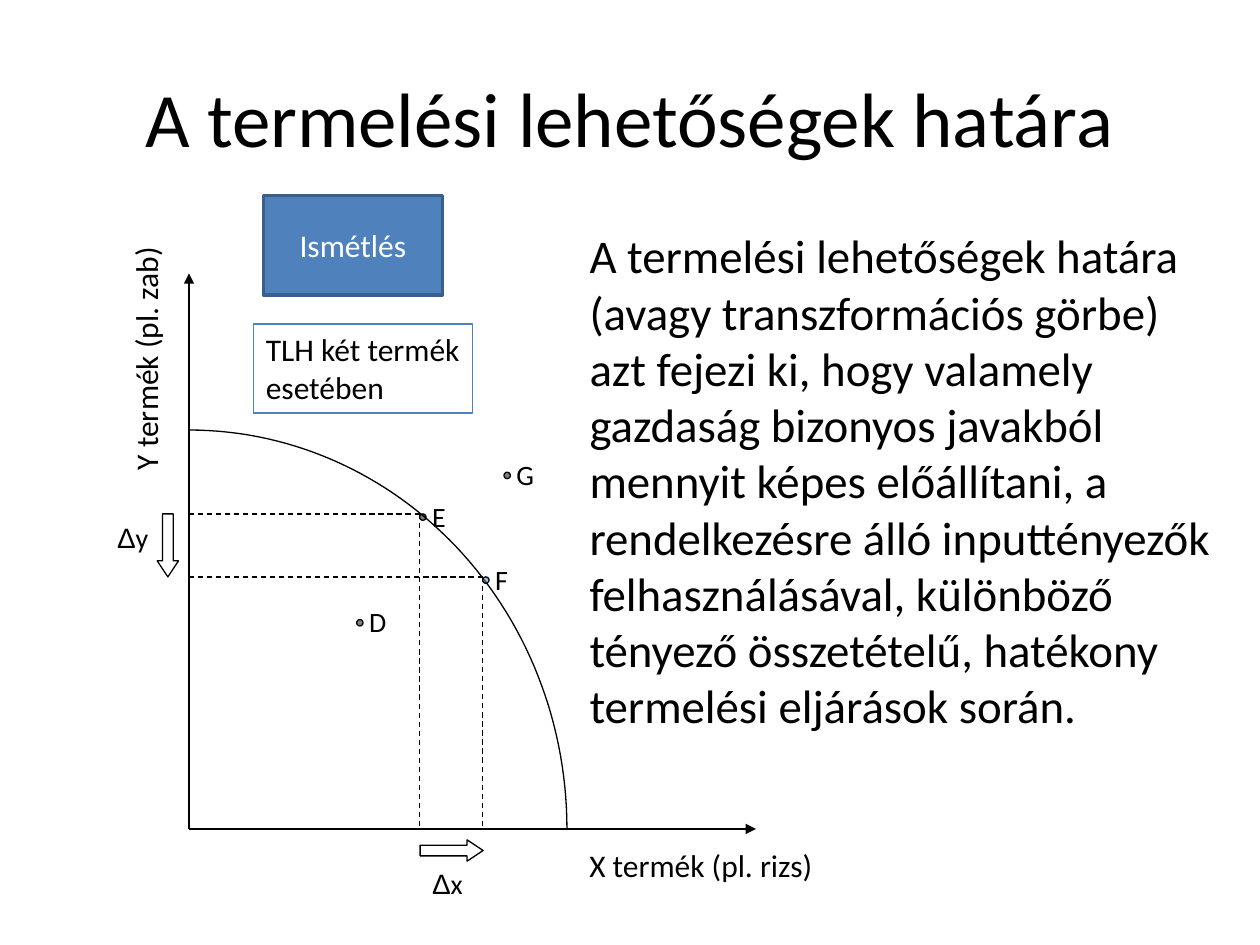
import math

from lxml import etree
from pptx import Presentation
from pptx.dml.color import RGBColor
from pptx.enum import dml, shapes, text
from pptx.oxml import ns
from pptx.util import Cm, Pt

BLACK = RGBColor(0x00, 0x00, 0x00)
WHITE = RGBColor(0xFF, 0xFF, 0xFF)
BLUE = RGBColor(0x4F, 0x81, 0xBD)
DARK_BLUE = RGBColor(0x3A, 0x5F, 0x8C)


def write(shape, *runs, size=18, color=BLACK, align=text.PP_ALIGN.LEFT,
          anchor=text.MSO_ANCHOR.TOP, space_before=0):
    """Fill a shape with one paragraph of (wording, font name) runs."""
    frame = shape.text_frame
    frame.word_wrap = True
    frame.auto_size = text.MSO_AUTO_SIZE.NONE
    frame.vertical_anchor = anchor
    paragraph = frame.paragraphs[0]
    paragraph.alignment = align
    paragraph.space_before = Pt(space_before)
    for wording, font_name in runs:
        run = paragraph.add_run()
        run.text = wording
        run.font.name = font_name
        run.font.size = Pt(size)
        run.font.color.rgb = color


def calibri(wording):
    return wording, "Calibri"


def place(shape, left, top, width, height):
    shape.left, shape.top = Cm(left), Cm(top)
    shape.width, shape.height = Cm(width), Cm(height)


def style_line(shape, color=BLACK, width=0.75):
    shape.line.color.rgb = color
    shape.line.width = Pt(width)


def add_label(slide, box, *runs, **text_format):
    shape = slide.shapes.add_textbox(*map(Cm, box))
    write(shape, *runs, **text_format)
    return shape


def add_preset(slide, kind, box, fill=None, alpha=None, line=BLACK, line_width=0.75):
    shape = slide.shapes.add_shape(kind, *map(Cm, box))
    shape.shadow.inherit = False
    style_line(shape, line, line_width)
    if fill is None:
        shape.fill.background()
        return shape
    shape.fill.solid()
    shape.fill.fore_color.rgb = fill
    if alpha is not None:
        color = shape.fill._xPr.find(".//" + ns.qn("a:srgbClr"))
        etree.SubElement(color, ns.qn("a:alpha"), val=str(alpha * 1000))
    return shape


def add_line(slide, start, end, dashed=False, arrow=False):
    line = slide.shapes.add_connector(shapes.MSO_CONNECTOR.STRAIGHT,
                                      *map(Cm, (*start, *end)))
    style_line(line)
    if dashed:
        line.line.dash_style = dml.MSO_LINE.DASH
    if arrow:
        etree.SubElement(line.line._get_or_add_ln(), ns.qn("a:tailEnd"), type="triangle")
    etree.SubElement(line._element.spPr, ns.qn("a:effectLst"))


def add_frontier(slide, origin, radius_x, radius_y, steps=60):
    """Draw the quarter ellipse from the y axis to the x axis."""
    angles = [math.pi / 2 * step / steps for step in range(steps + 1)]
    points = [(Cm(origin[0] + radius_x * math.sin(angle)),
               Cm(origin[1] - radius_y * math.cos(angle))) for angle in angles]
    builder = slide.shapes.build_freeform(*points[0])
    builder.add_line_segments(points[1:], close=False)
    curve = builder.convert_to_shape()
    curve.shadow.inherit = False
    curve.fill.background()
    style_line(curve)


def add_diagram(slide, left, top, width, height):
    """Draw the axes, the frontier and its points; the box spans the axes."""
    base = top + height

    def at(x, y):
        return left + x, base - y

    origin = at(0, 0)
    add_line(slide, origin, at(0, height), arrow=True)
    add_line(slide, origin, at(width, 0), arrow=True)
    add_label(slide, (*at(7.82, -0.23), 8.26, 1.02), calibri("X termék (pl. rizs)"))
    y_label = add_label(slide, (*at(-3.51, 10.13), 5.28, 1.02), calibri("Y termék (pl. zab)"))
    y_label.rotation = 270
    add_frontier(slide, origin, 7.62, 8.04)

    e_point, f_point = (4.65, 6.35), (5.92, 5.08)
    points = [("D", (3.38, 4.22), BLACK), ("E", e_point, BLACK),
              ("G", (6.35, 7.19), BLACK), ("F", f_point, BLUE)]
    for name, (x, y), fill in points:
        add_preset(slide, shapes.MSO_SHAPE.OVAL, (*at(x, y), 0.13, 0.13), fill, alpha=50)
        add_label(slide, (*at(x, y + 0.42), 1.07, 0.94), calibri(name), size=16)
    for x, y in (e_point, f_point):
        add_line(slide, at(x, y), at(0, y), dashed=True)
        add_line(slide, at(x, y), at(x, 0), dashed=True)

    for corner, rotation in ((at(-0.64, e_point[1]), 0), (at(5.08, 0.2), 270)):
        arrow = add_preset(slide, shapes.MSO_SHAPE.DOWN_ARROW, (*corner, 0.43, 1.27),
                           WHITE, alpha=50)
        arrow.adjustments[0], arrow.adjustments[1] = 0.5, 0.75
        arrow.rotation = rotation
    for axis, corner in (("y", at(-1.7, e_point[1])), ("x", at(e_point[0], -0.64))):
        add_label(slide, (*corner, 1.7, 0.94), ("Δ", "Arial"), calibri(axis), size=16)


def add_title(slide, *box):
    title = slide.shapes.title
    place(title, *box)
    write(title, calibri("A termelési lehetőségek határa"), size=44,
          align=text.PP_ALIGN.CENTER, anchor=text.MSO_ANCHOR.MIDDLE)


def add_definition(slide, *box):
    body = slide.placeholders[1]
    place(body, *box)
    write(body, calibri(
        "A termelési lehetőségek határa (avagy transzformációs görbe) azt fejezi ki, "
        "hogy valamely gazdaság bizonyos javakból mennyit képes előállítani, a "
        "rendelkezésre álló inputtényezők felhasználásával, különböző tényező "
        "összetételű, hatékony termelési eljárások során."), size=26.8, space_before=2)
    properties = body.text_frame.paragraphs[0]._p.get_or_add_pPr()
    properties.set("marL", "0")
    properties.set("indent", "0")
    etree.SubElement(properties, ns.qn("a:buNone"))


def add_captions(slide, left, top):
    badge = add_preset(slide, shapes.MSO_SHAPE.RECTANGLE, (left + 0.2, top, 3.61, 2.01),
                       BLUE, line=DARK_BLUE, line_width=2)
    write(badge, calibri("Ismétlés"), color=WHITE, align=text.PP_ALIGN.CENTER,
          anchor=text.MSO_ANCHOR.MIDDLE)
    caption = add_preset(slide, shapes.MSO_SHAPE.RECTANGLE, (left, top + 2.59, 4.42, 1.8),
                         line=BLUE)
    write(caption, calibri("TLH két termék esetében"))


def main():
    presentation = Presentation()
    presentation.slide_width, presentation.slide_height = Cm(25.4), Cm(19.05)
    slide = presentation.slides.add_slide(presentation.slide_layouts[1])
    add_title(slide, 1.27, 0.76, 22.86, 3.18)
    add_definition(slide, 11.63, 4.45, 13.26, 11.68)
    add_diagram(slide, 3.81, 5.51, 11.43, 11.2)
    add_captions(slide, 5.11, 3.94)
    presentation.save("out.pptx")


if __name__ == "__main__":
    main()
